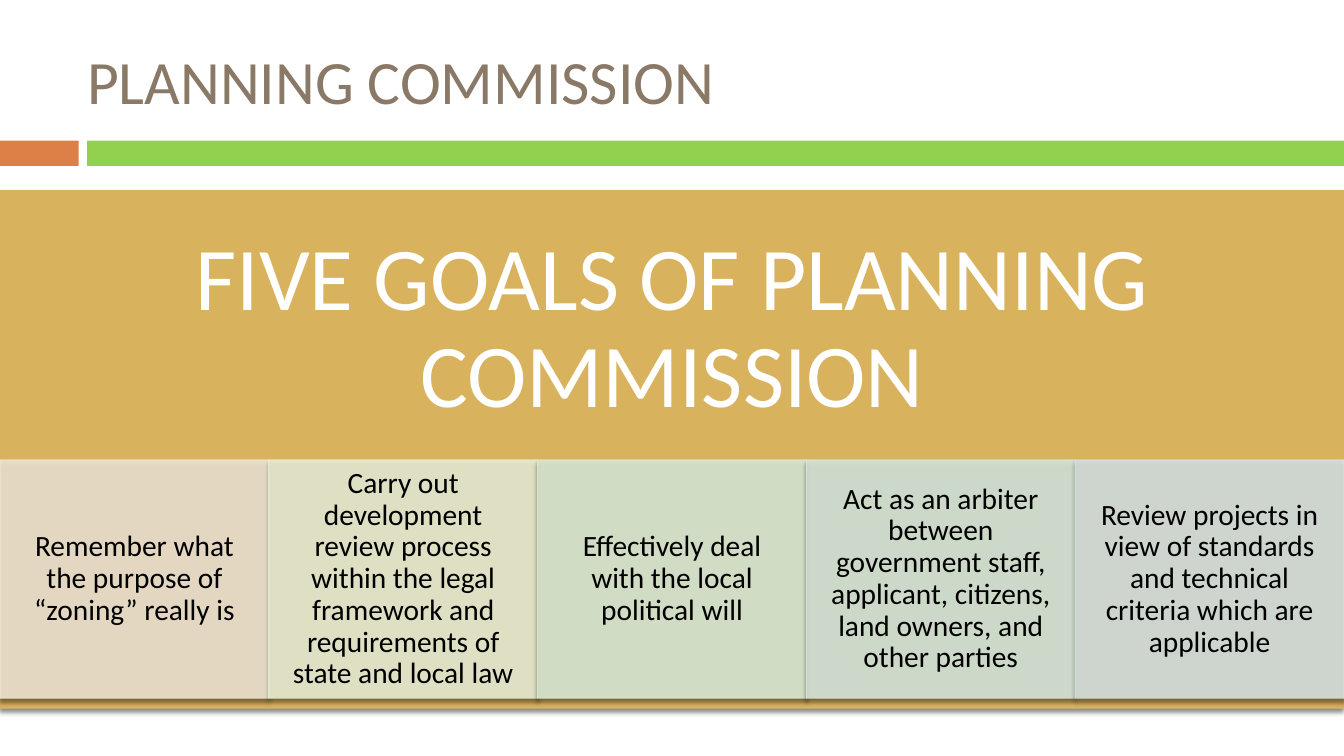
from lxml.etree import SubElement
from pptx import Presentation
from pptx.dml.color import RGBColor
from pptx.enum.shapes import MSO_SHAPE
from pptx.enum.text import MSO_ANCHOR, PP_ALIGN
from pptx.oxml.ns import qn
from pptx.util import Pt

PX = 9525  # EMU in one px, 96 px to the inch
WIDE, HIGH = 1280, 720

GOALS = [
    ("F0E4D2", "Remember what the purpose of “zoning” really is"),
    ("E9EDD3", "Carry out development review process within the legal "
               "framework and requirements of state and local law"),
    ("DBE9D4", "Effectively deal with the local political will"),
    ("D5E5D9", "Act as an arbiter between government staff, applicant, "
               "citizens, land owners, and other parties"),
    ("D7E1DF", "Review projects in view of standards and technical "
               "criteria which are applicable"),
]


def color(code):
    return RGBColor.from_string(code)


def scale(*sizes):
    return [size * PX for size in sizes]


def fade(node, share):
    """Set the opacity, in percent, of a colour element."""
    SubElement(node, qn("a:alpha"), val=str(share * 1000))


def block(slide, box, fill):
    shape = slide.shapes.add_shape(MSO_SHAPE.RECTANGLE, *scale(*box))
    shape.shadow.inherit = False
    shape.fill.solid()
    shape.fill.fore_color.rgb = color(fill)
    shape.line.fill.background()
    return shape


def shade(shape):
    """Drop a soft shadow straight down."""
    effects = shape._element.spPr.find(qn("a:effectLst"))
    drop = SubElement(effects, qn("a:outerShdw"), blurRad=str(Pt(3)),
                      dist=str(Pt(2.4)), dir="5400000", algn="ctr",
                      rotWithShape="0")
    fade(SubElement(drop, qn("a:srgbClr"), val="000000"), 45)


def write(shape, text, size, ink, pads, align=PP_ALIGN.CENTER, space=0.9):
    frame = shape.text_frame
    frame.word_wrap = True
    frame.vertical_anchor = MSO_ANCHOR.MIDDLE
    (frame.margin_left, frame.margin_top,
     frame.margin_right, frame.margin_bottom) = scale(*pads)
    line = frame.paragraphs[0]
    line.text = text
    line.alignment = align
    line.line_spacing = space
    line.font.name = "Calibri"
    line.font.size = Pt(size)
    line.font.color.rgb = color(ink)


def header(slide, left, top, width, height):
    title = slide.shapes.add_textbox(*scale(left + 73, top + 24, 1141, 104))
    write(title, "PLANNING COMMISSION", 44, "8A7967", (10, 5, 10, 5),
          PP_ALIGN.LEFT, 1.0)
    bar = 24
    y = top + height - bar
    block(slide, (left, y, 75, bar), "DD8047")
    block(slide, (left + 83, y, width - 83, bar), "92D050")


def card(slide, box, fill, text):
    shape = block(slide, box, fill)
    shape.line.color.rgb = color(fill)
    shape.line.width = Pt(0.79)
    for node in list(shape._element.spPr.iter(qn("a:srgbClr"))):
        fade(node, 90)
    shade(shape)
    write(shape, text, 21, "000000", (15, 3, 15, 3))


def board(slide, left, top, width, height):
    """Place the banner with the row of goal cards on it."""
    banner = 267
    panel = block(slide, (left, top, width, height), "D8B25C")
    shade(panel)
    write(panel, "FIVE GOALS OF PLANNING COMMISSION", 64, "FFFFFF",
          (48, 20, 48, 20 + height - banner))
    step = width // len(GOALS)
    for i, (fill, text) in enumerate(GOALS):
        card(slide, (left + i * step, top + 257, step, 227), fill, text)


def main():
    deck = Presentation()
    deck.slide_width, deck.slide_height = scale(WIDE, HIGH)
    slide = deck.slides.add_slide(deck.slide_layouts[6])
    header(slide, 0, 0, WIDE, 158)
    board(slide, 0, 181, WIDE, 494)
    deck.save("out.pptx")


if __name__ == "__main__":
    main()
